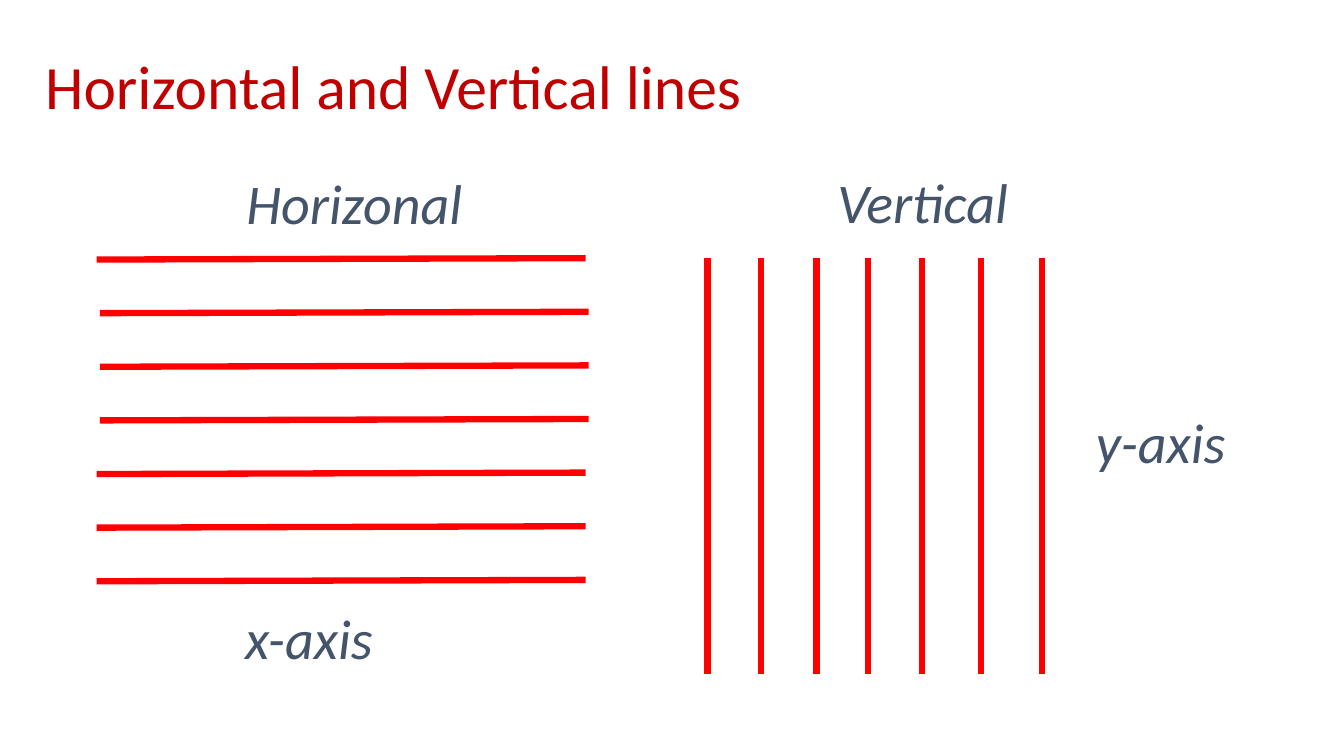
import pptx
import pptx.util
import pptx.dml.color
import pptx.enum.shapes
import pptx.enum.text
import pptx.oxml

Pt = pptx.util.Pt
Align = pptx.enum.text.PP_ALIGN
Anchor = pptx.enum.text.MSO_ANCHOR


def color(code):
    return pptx.dml.color.RGBColor.from_string(code)


class Page:
    face = "Calibri"
    title_ink = "C00000"
    label_ink = "44546A"
    line_ink = "FF0000"
    weight = 4.5

    def __init__(self, slide):
        self.slide = slide

    def text(self, words, box, size, ink, align, anchor, italic=False):
        frame = self.slide.shapes.add_textbox(*map(Pt, box)).text_frame
        frame.word_wrap = True
        frame.vertical_anchor = anchor
        para = frame.paragraphs[0]
        para.text = words
        para.alignment = align
        para.line_spacing = 0.9
        font = para.font
        font.name, font.size, font.italic = self.face, Pt(size), italic
        font.color.rgb = color(ink)

    def title(self, words, box):
        self.text(words, box, 44, self.title_ink, Align.LEFT, Anchor.MIDDLE)

    def label(self, words, left, top):
        self.text(words, (left, top, 386.6, 82), 40, self.label_ink,
                  Align.CENTER, Anchor.TOP, True)

    def line(self, *ends):
        kind = pptx.enum.shapes.MSO_CONNECTOR.STRAIGHT
        link = self.slide.shapes.add_connector(kind, *map(Pt, ends))
        link.line.color.rgb = color(self.line_ink)
        link.line.width = Pt(self.weight)
        link._element.spPr.append(pptx.oxml.parse_xml(
            '<a:effectLst xmlns:a="http://schemas.openxmlformats.org/drawingml/2006/main"/>'))


def main():
    deck = pptx.Presentation()
    deck.slide_width, deck.slide_height = Pt(960), Pt(540)
    page = Page(deck.slides.add_slide(deck.slide_layouts[6]))

    page.title("Horizontal and Vertical lines", (25.2, 22.3, 813.6, 82.8))

    # Horizontal lines, slightly tilted; rows 1 to 3 sit further right
    for row in range(7):
        left = 71.3 if row in (1, 2, 3) else 69.1
        y = 184.4 + 38.3 * row
        page.line(left + 349.2, y, left, y + 1)

    # Vertical lines, spaced by hand
    for x in (505.4, 543.6, 583.2, 619.9, 658.8, 700.6, 744.5):
        page.line(x, 184.5, x, 481.8)

    # Headings and axis names
    page.label("Horizonal", 59.8, 122.4)
    page.label("Vertical", 465.8, 121.7)
    page.label("x-axis", 27.4, 432.7)
    page.label("y-axis", 635.8, 293)

    deck.save("out.pptx")


if __name__ == "__main__":
    main()
